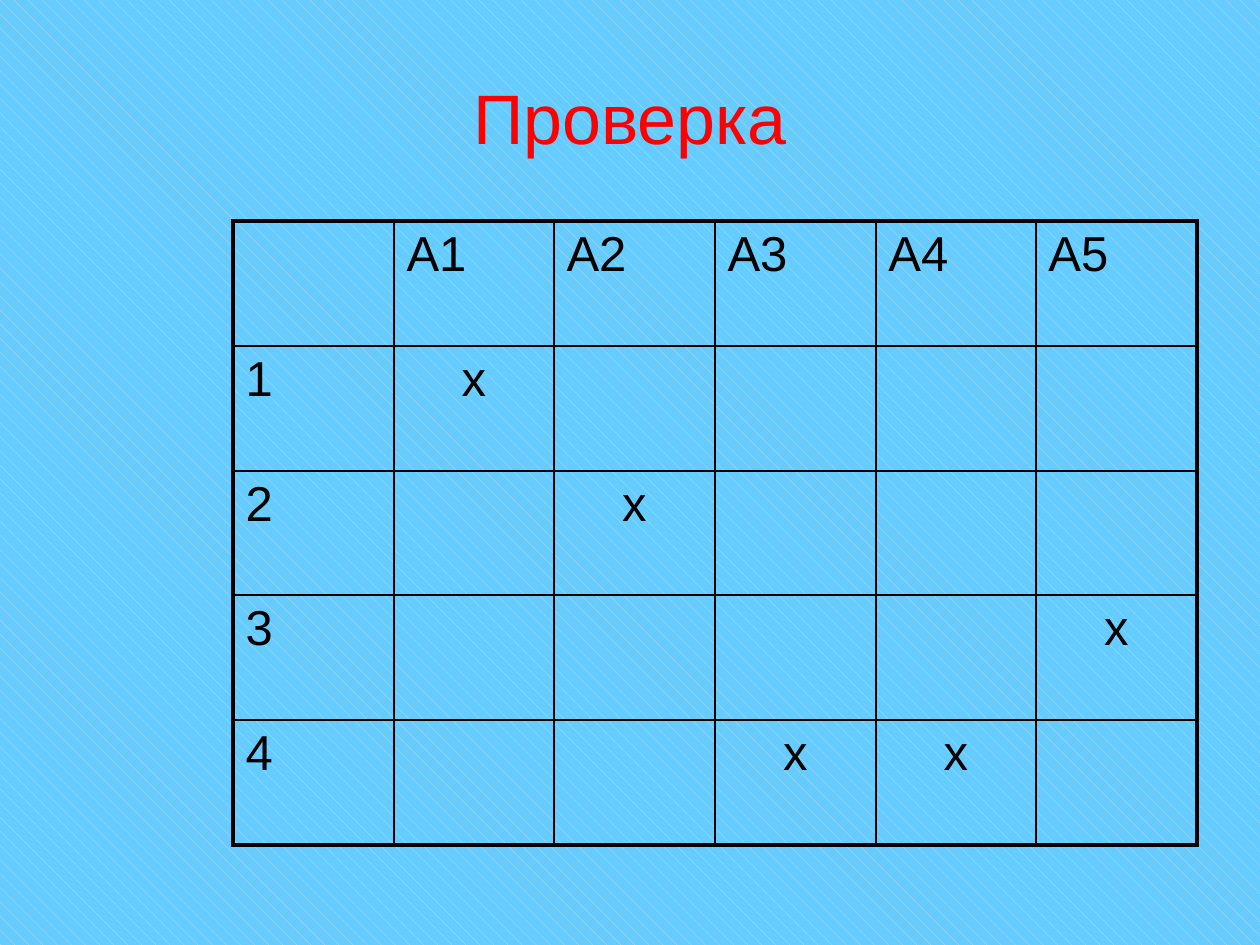
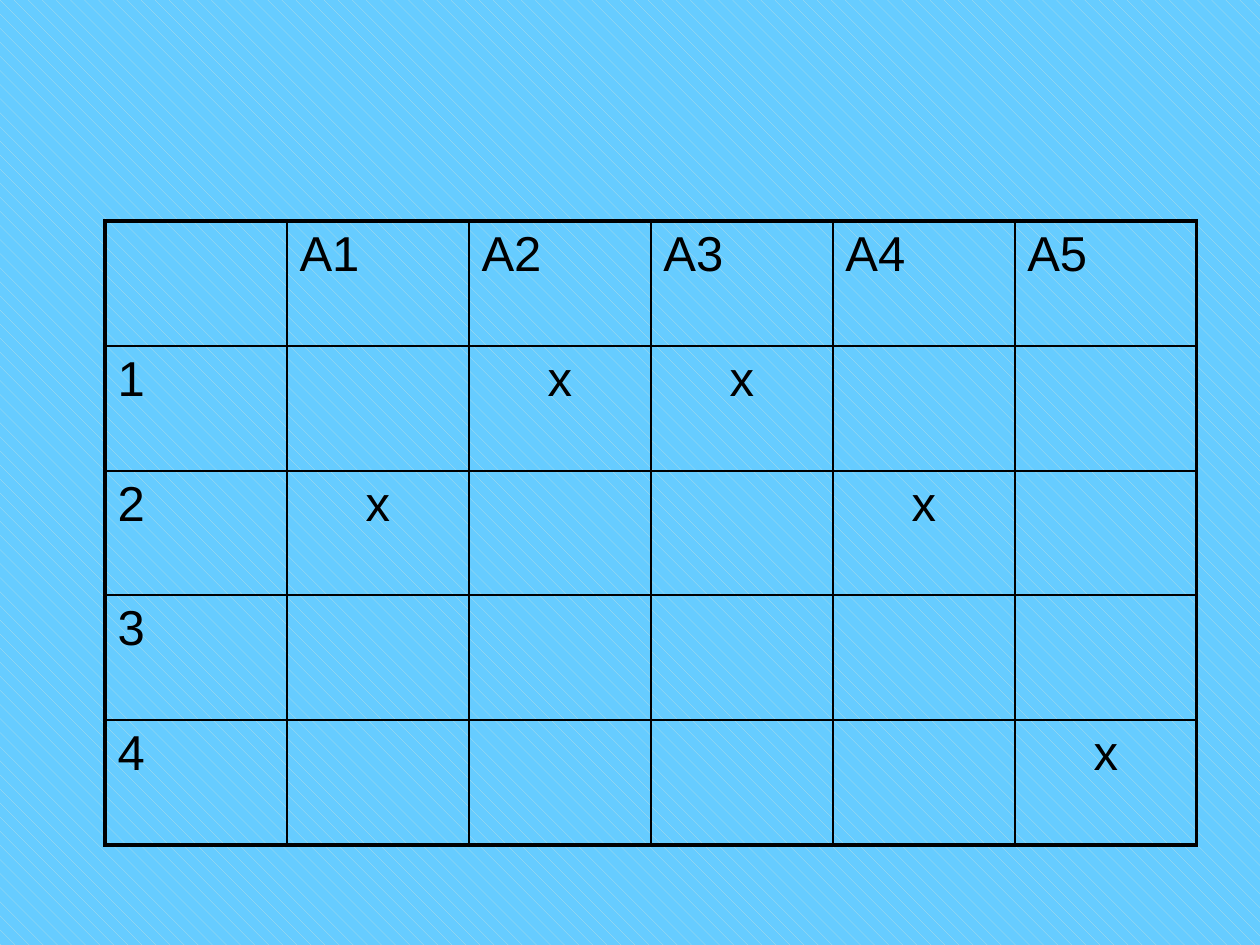
from dataclasses import dataclass

from lxml import etree
from pptx import Presentation, util as u
from pptx.dml import color
from pptx.enum import dml, text
from pptx.oxml import ns


@dataclass(frozen=True)
class Theme:
    font: str = "Arial"
    background: str = "66CCFF"
    hatch: str = "BBE0E3"
    title: str = "FF0000"
    ink: str = "000000"
    title_size: int = 40
    cell_size: int = 28
    outer_line: float = 2.25
    inner_line: float = 1


theme = Theme()
SCALE = u.Inches(1) / 126


def px(length):
    return u.Emu(round(length * SCALE))


def write(paragraph, content, size, ink, alignment):
    paragraph.alignment = alignment
    run = paragraph.add_run()
    run.text = content
    for name, value in {"name": theme.font, "size": u.Pt(size), "bold": False}.items():
        setattr(run.font, name, value)
    run.font.color.rgb = color.RGBColor.from_string(ink)


TABLE_TOP, TABLE_HEIGHT = 221, 624
HEADINGS = ["А1", "А2", "А3", "А4", "А5"]
ANSWERS = ["1", "2", "3", "4"]
COLUMNS, ROWS = len(HEADINGS) + 1, len(ANSWERS) + 1
checks = [
    {"title": "Проверка", "left": 233, "width": 964,
     "marks": [(1, 1), (2, 2), (3, 5), (4, 3), (4, 4)]},
    {"title": None, "left": 105, "width": 1092,
     "marks": [(1, 2), (1, 3), (2, 1), (2, 4), (4, 5)]},
]

presentation = Presentation()
presentation.slide_width, presentation.slide_height = px(1260), px(945)

fill = presentation.slide_master.background.fill
fill.patterned()
fill.pattern = dml.MSO_PATTERN.SHINGLE
fill.fore_color.rgb = color.RGBColor.from_string(theme.hatch)
fill.back_color.rgb = color.RGBColor.from_string(theme.background)

for check in checks:
    slide = presentation.slides.add_slide(presentation.slide_layouts[6])

    if check["title"]:
        frame = slide.shapes.add_textbox(px(63), px(38), px(1134), px(158)).text_frame
        for name, value in {"word_wrap": True, "vertical_anchor": text.MSO_ANCHOR.MIDDLE}.items():
            setattr(frame, name, value)
        write(frame.paragraphs[0], check["title"], theme.title_size, theme.title,
              text.PP_ALIGN.CENTER)

    table = slide.shapes.add_table(ROWS, COLUMNS, px(check["left"]), px(TABLE_TOP),
                                   px(check["width"]), px(TABLE_HEIGHT)).table
    for name in ("first_row", "horz_banding"):
        setattr(table, name, False)
    for tracks, attribute, total in ((table.columns, "width", check["width"]),
                                     (table.rows, "height", TABLE_HEIGHT)):
        count = len(tracks)
        for index, track in enumerate(tracks):
            start, end = round(total * index / count), round(total * (index + 1) / count)
            setattr(track, attribute, px(end - start))

    contents = {(0, column): heading for column, heading in enumerate(HEADINGS, 1)}
    contents.update({(row, 0): answer for row, answer in enumerate(ANSWERS, 1)})
    contents.update({mark: "х" for mark in check["marks"]})

    for row in range(ROWS):
        for column in range(COLUMNS):
            cell = table.cell(row, column)
            properties = cell._tc.get_or_add_tcPr()
            outer_sides = {"lnL": column == 0, "lnR": column == COLUMNS - 1,
                           "lnT": row == 0, "lnB": row == ROWS - 1}
            for side, outer in outer_sides.items():
                weight = theme.outer_line if outer else theme.inner_line
                line = etree.SubElement(properties, ns.qn(f"a:{side}"), w=str(u.Pt(weight)))
                solid = etree.SubElement(line, ns.qn("a:solidFill"))
                etree.SubElement(solid, ns.qn("a:srgbClr"), val=theme.ink)
            cell.fill.background()

            if (row, column) in contents:
                centred = (row, column) in check["marks"]
                paragraph = cell.text_frame.paragraphs[0]
                write(paragraph, contents[row, column], theme.cell_size, theme.ink,
                      text.PP_ALIGN.CENTER if centred else text.PP_ALIGN.LEFT)
                spacing = etree.SubElement(paragraph._p.get_or_add_pPr(), ns.qn("a:spcBef"))
                etree.SubElement(spacing, ns.qn("a:spcPct"), val="20000")

presentation.save("out.pptx")
